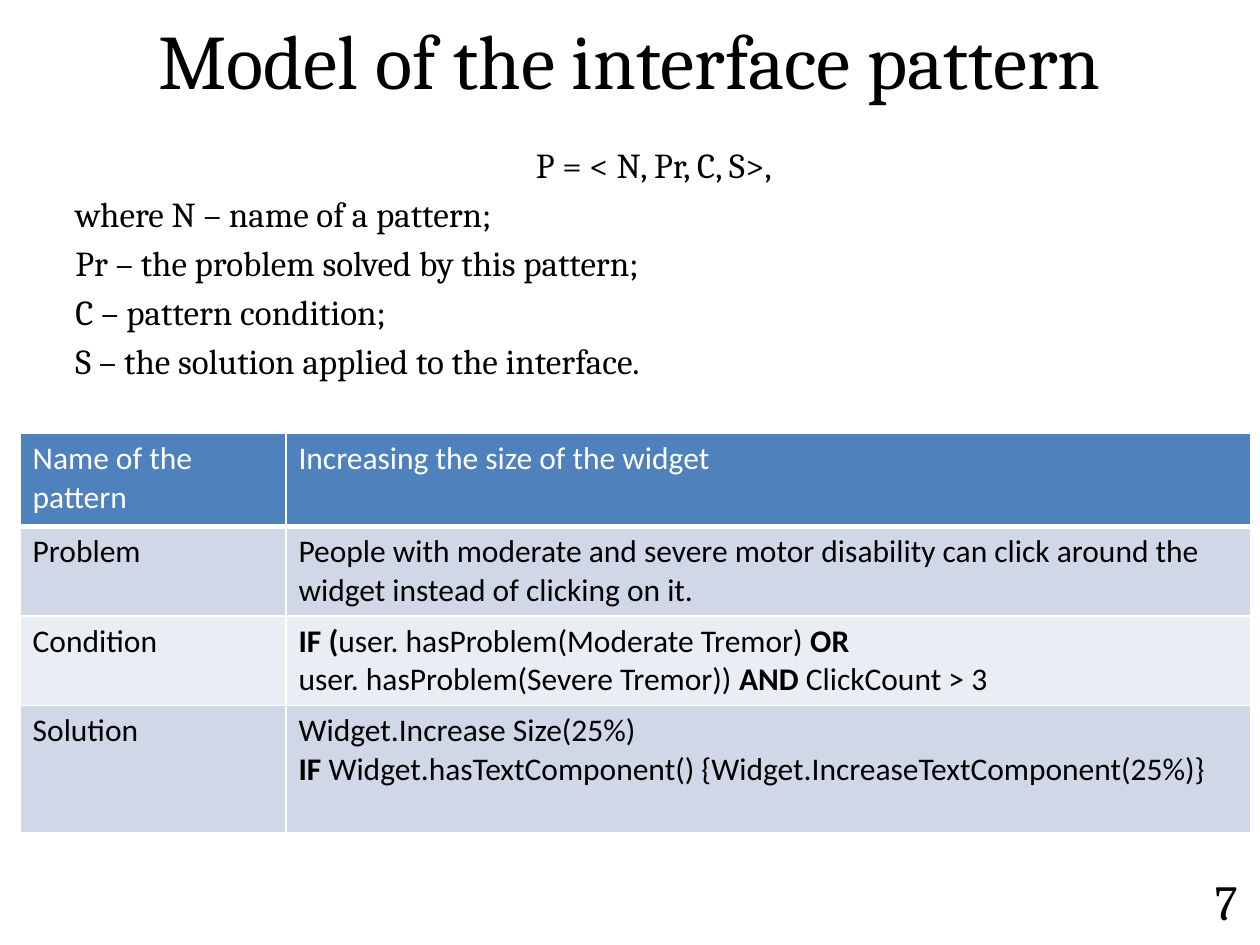
from dataclasses import dataclass

import pptx
import pptx.dml.color
import pptx.enum.text
import pptx.oxml.ns
import pptx.util
from lxml import etree
from pptx.util import Inches

ALIGN = pptx.enum.text.PP_ALIGN
ANCHOR = pptx.enum.text.MSO_ANCHOR


@dataclass(frozen=True)
class Theme:
    text: str = "000000"
    white: str = "FFFFFF"
    header: str = "4F81BD"
    bands: tuple = ("D0D8E8", "E9EDF4")
    heading_font: str = "Cambria"
    table_font: str = "Calibri"
    title_size: int = 44
    body_size: int = 20
    table_size: int = 18
    number_size: int = 28


theme = Theme()


def write(frame, lines, font, size, color, align=ALIGN.LEFT):
    """Fill a text frame, one paragraph a line; **marked** parts are bold."""
    frame.word_wrap = True
    frame.text = "\n".join(line.replace("**", "") for line in lines)
    for paragraph, line in zip(frame.paragraphs, lines):
        paragraph.alignment = align
        if "**" in line:
            paragraph.clear()
            for i, part in enumerate(line.split("**")):
                if part:
                    run = paragraph.add_run()
                    run.text = part
                    run.font.bold = i % 2 == 1
        for run in paragraph.runs:
            run.font.name = font
            run.font.size = pptx.util.Pt(size)
            run.font.bold = bool(run.font.bold)
            run.font.color.rgb = pptx.dml.color.RGBColor.from_string(color)


def add_border(cell, side, points):
    properties = cell._tc.get_or_add_tcPr()
    line = etree.SubElement(properties, pptx.oxml.ns.qn(f"a:ln{side}"),
                            w=str(pptx.util.Pt(points)))
    fill = etree.SubElement(line, pptx.oxml.ns.qn("a:solidFill"))
    etree.SubElement(fill, pptx.oxml.ns.qn("a:srgbClr"), val=theme.white)


deck = pptx.Presentation()
deck.slide_width, deck.slide_height = Inches(10), Inches(7.5)
slide = deck.slides.add_slide(deck.slide_layouts[6])

# Title
title = slide.shapes.add_textbox(Inches(0.5), Inches(-0.16), Inches(9), Inches(1.25))
title.text_frame.vertical_anchor = ANCHOR.MIDDLE
write(title.text_frame, ["Model of the interface pattern"],
      theme.heading_font, theme.title_size, theme.text, ALIGN.CENTER)

# Formula and its terms
definition = slide.shapes.add_textbox(Inches(0.5), Inches(1.09), Inches(9), Inches(5.61))
write(definition.text_frame, [
    "\tP = < N, Pr, C, S>,",
    "where N – name of a pattern;",
    "Pr – the problem solved by this pattern;",
    "C – pattern condition;",
    "S – the solution applied to the interface.",
], theme.heading_font, theme.body_size, theme.text)
for paragraph in definition.text_frame.paragraphs:
    paragraph.space_before = pptx.util.Pt(theme.body_size * 0.2)
    indent = paragraph._p.get_or_add_pPr()
    indent.set("marL", str(Inches(0.38)))
    indent.set("indent", str(Inches(-0.38)))
definition.text_frame.paragraphs[0].alignment = ALIGN.CENTER

# Slide number
number = slide.shapes.add_textbox(Inches(7.59), Inches(6.95), Inches(2.33), Inches(0.4))
number.text_frame.vertical_anchor = ANCHOR.MIDDLE
write(number.text_frame, ["7"], theme.heading_font, theme.number_size,
      theme.text, ALIGN.RIGHT)

# Example pattern
pattern_rows = [
    ("Name of the pattern", ["Increasing the size of the widget"]),
    ("Problem", ["People with moderate and severe motor disability can click "
                 "around the widget instead of clicking on it."]),
    ("Condition", ["**IF (**user. hasProblem(Moderate Tremor)** OR**",
                   "user. hasProblem(Severe Tremor)) **AND **ClickCount > 3"]),
    ("Solution", ["Widget.Increase Size(25%)",
                  "**IF **Widget.hasTextComponent() "
                  "{Widget.IncreaseTextComponent(25%)}"]),
]
pattern = slide.shapes.add_table(len(pattern_rows), 2, Inches(0.16), Inches(3.44),
                                 Inches(9.77), Inches(3.17)).table
for column, width in zip(pattern.columns, (2.11, 7.66)):
    column.width = Inches(width)
for row, height in zip(pattern.rows, (0.74, 0.71, 0.71, 1.01)):
    row.height = Inches(height)

for r, (label, details) in enumerate(pattern_rows):
    is_header = r == 0
    fill_color = theme.header if is_header else theme.bands[(r - 1) % 2]
    text_color = theme.white if is_header else theme.text
    for c, lines in enumerate(([label], details)):
        cell = pattern.cell(r, c)
        write(cell.text_frame, lines, theme.table_font, theme.table_size, text_color)
        for side in "LRTB":
            thick = (is_header and side == "B") or (r == 1 and side == "T")
            add_border(cell, side, 3 if thick else 1)
        cell.fill.solid()
        cell.fill.fore_color.rgb = pptx.dml.color.RGBColor.from_string(fill_color)

deck.save("out.pptx")
